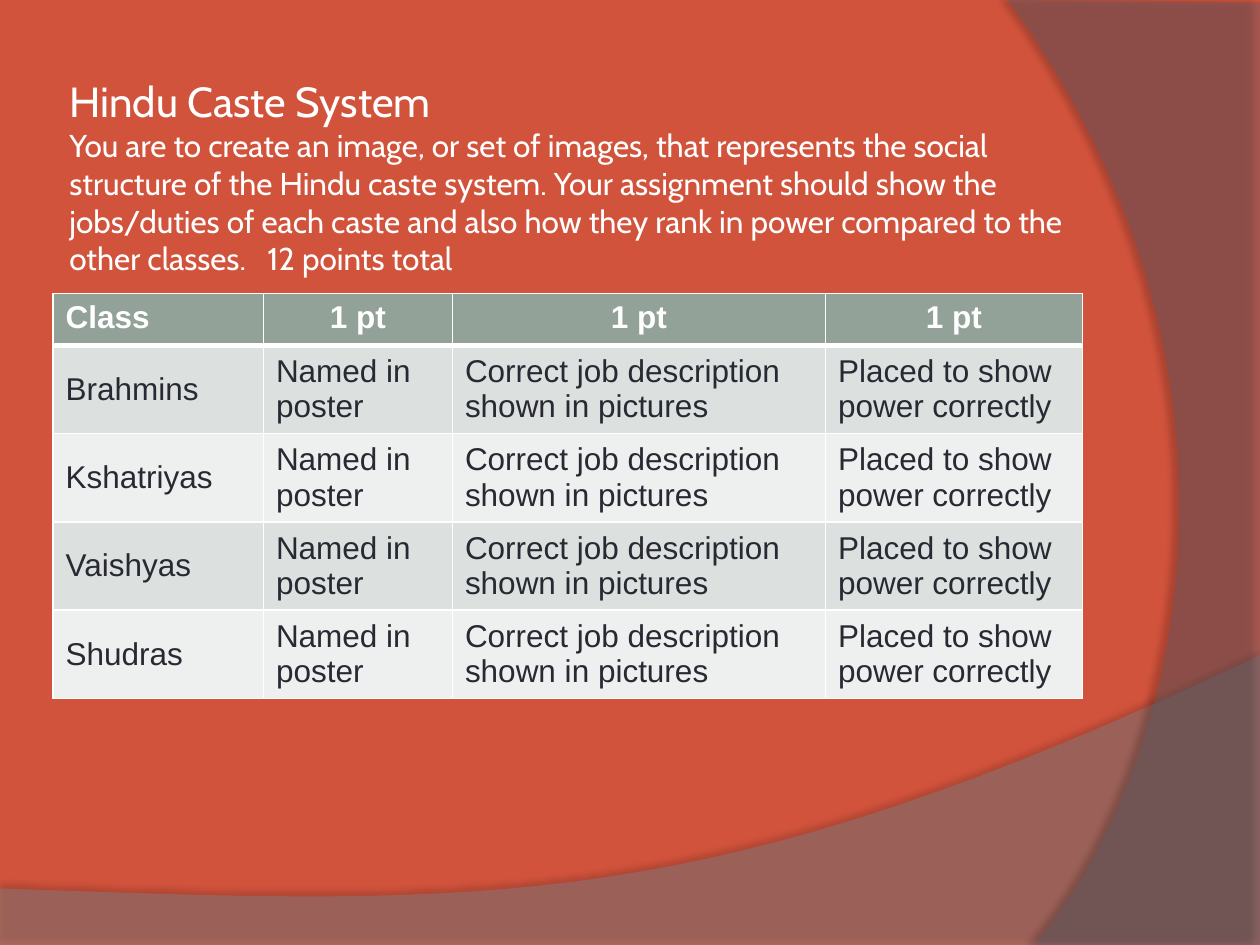
from lxml import etree
from pptx import Presentation
from pptx.dml.color import RGBColor
from pptx.enum.text import MSO_ANCHOR as Anchor, PP_ALIGN as Align
from pptx.oxml.ns import qn
from pptx.util import Cm, Pt

COLORS = {
    "background": "D2533C", "wave": "818185", "crescent": "5E5E6B",
    "white": "FFFFFF", "shadow": "000000", "ink": "292934",
    "header": "93A299", "odd_row": "DCE0DE", "even_row": "EEF0EF",
}
TASK = ("You are to create an image, or set of images, that represents the social "
        "structure of the Hindu caste system. Your assignment should show the "
        "jobs/duties of each caste and also how they rank in power compared to the "
        "other classes.\t12 points total")
HEADINGS = ["Class", "1 pt", "1 pt", "1 pt"]
CASTES = ["Brahmins", "Kshatriyas", "Vaishyas", "Shudras"]
CRITERIA = ["Named in poster", "Correct job description shown in pictures",
            "Placed to show power correctly"]


def rgb(name):
    return RGBColor.from_string(COLORS[name])


def add_node(parent, tag, **attributes):
    node = etree.SubElement(parent, qn(tag))
    for key, value in attributes.items():
        node.set(key, str(value))
    return node


def add_color(parent, name, opacity=100):
    color = add_node(parent, "a:srgbClr", val=COLORS[name])
    if opacity < 100:
        add_node(color, "a:alpha", val=opacity * 1000)


def bezier(p0, p1, p2, p3, steps=32):
    """Points along a cubic curve, both ends included."""
    for step in range(steps + 1):
        t = step / steps
        u = 1 - t
        yield tuple(u**3 * a + 3 * u * u * t * b + 3 * u * t * t * c + t**3 * d
                    for a, b, c, d in zip(p0, p1, p2, p3))


class SlideBuilder:
    title_font = "Cabin"
    table_font = "Arial"
    text_size = 18
    heading_size = 24

    def __init__(self, slide):
        self.slide = slide
        slide.background.fill.solid()
        slide.background.fill.fore_color.rgb = rgb("background")

    def swoosh(self, corners, curve, color, opacity, shadow_opacity, distance, angle):
        """Translucent outline: straight corners, then one curved edge."""
        points = [(Cm(x), Cm(y)) for x, y in corners + list(bezier(*curve))]
        builder = self.slide.shapes.build_freeform(*points[0])
        builder.add_line_segments(points[1:], close=True)
        shape = builder.convert_to_shape()
        shape.line.fill.background()
        shape.fill.solid()
        shape.fill.fore_color.rgb = rgb(color)
        shape.shadow.inherit = False
        properties = shape._element.spPr
        fill_color = properties.find(qn("a:solidFill"))[0]
        add_node(fill_color, "a:alpha", val=opacity * 1000)
        shadow = add_node(properties.find(qn("a:effectLst")), "a:outerShdw",
                          blurRad=Pt(4), dist=Pt(distance), dir=angle * 60000,
                          rotWithShape=0)
        add_color(shadow, "shadow", shadow_opacity)

    def title(self, heading, task, left, top, width, height, tab):
        frame = self.slide.shapes.add_textbox(
            Cm(left), Cm(top), Cm(width), Cm(height)).text_frame
        frame.word_wrap = True
        frame.vertical_anchor = Anchor.MIDDLE
        frame.margin_left = frame.margin_right = Cm(0.13)
        frame.margin_top = frame.margin_bottom = Cm(0.13)
        paragraph = frame.paragraphs[0]
        paragraph.font.name = self.title_font
        paragraph.font.color.rgb = rgb("white")
        tabs = etree.Element(qn("a:tabLst"))
        add_node(tabs, "a:tab", pos=Cm(tab), algn="l")
        paragraph._p.get_or_add_pPr().insert(0, tabs)
        heading_run = paragraph.add_run()
        heading_run.text = heading
        heading_run.font.size = Pt(self.heading_size)
        paragraph.add_line_break()
        task_run = paragraph.add_run()
        task_run.text = task
        task_run.font.size = Pt(self.text_size)

    def borders(self, cell, top=1, bottom=1):
        properties = cell._tc.get_or_add_tcPr()
        widths = {"a:lnL": 1, "a:lnR": 1, "a:lnT": top, "a:lnB": bottom}
        for index, (tag, width) in enumerate(widths.items()):
            line = add_node(properties, tag, w=Pt(width))
            add_color(add_node(line, "a:solidFill"), "white")
            properties.insert(index, line)

    def cell(self, cell, text, fill, color, bold=False, align=Align.LEFT):
        cell.text = text
        cell.fill.solid()
        cell.fill.fore_color.rgb = rgb(fill)
        for paragraph in cell.text_frame.paragraphs:
            paragraph.alignment = align
            paragraph.font.name = self.table_font
            paragraph.font.size = Pt(self.text_size)
            paragraph.font.bold = bold
            paragraph.font.color.rgb = rgb(color)

    def rubric(self, rows, left, top, widths, header_height, row_height):
        heights = [header_height] + [row_height] * (len(rows) - 1)
        table = self.slide.shapes.add_table(
            len(rows), len(widths), Cm(left), Cm(top),
            Cm(sum(widths)), Cm(sum(heights))).table
        for column, width in zip(table.columns, widths):
            column.width = Cm(width)
        for r, (texts, height) in enumerate(zip(rows, heights)):
            table.rows[r].height = Cm(height)
            for c, text in enumerate(texts):
                cell = table.cell(r, c)
                if r == 0:
                    self.cell(cell, text, "header", "white", bold=True,
                              align=Align.CENTER if c else Align.LEFT)
                else:
                    self.cell(cell, text, "odd_row" if r % 2 else "even_row", "ink")
                    cell.vertical_anchor = Anchor.MIDDLE
                self.borders(cell, top=3 if r == 1 else 1, bottom=3 if r == 0 else 1)


def main():
    deck = Presentation()
    deck.slide_width, deck.slide_height = Cm(25.4), Cm(19.05)
    page = SlideBuilder(deck.slides.add_slide(deck.slide_layouts[6]))

    page.swoosh([(0, 17.91), (0, 19.08), (25.4, 19.08)],
                [(25.4, 13.21), (14.2, 18.52), (9.93, 18.26), (0, 17.91)],
                "wave", 45, shadow_opacity=35, distance=3.5, angle=270)
    page.swoosh([(25.4, 0.05), (25.4, 19.05)],
                [(20.85, 19.05), (23.75, 15.72), (25.86, 7.62), (20.32, 0)],
                "crescent", 40, shadow_opacity=45, distance=4, angle=180)
    page.title("Hindu Caste System", TASK, 1.27, 0.76, 20.75, 5.59, tab=3.99)

    rows = [HEADINGS] + [[caste] + CRITERIA for caste in CASTES]
    rows[2][2] = "Correct job description\nshown in pictures"
    page.rubric(rows, 1.07, 5.92, [4.24, 3.81, 7.52, 5.18],
                header_height=1.04, row_height=1.68)
    deck.save("out.pptx")


if __name__ == "__main__":
    main()
